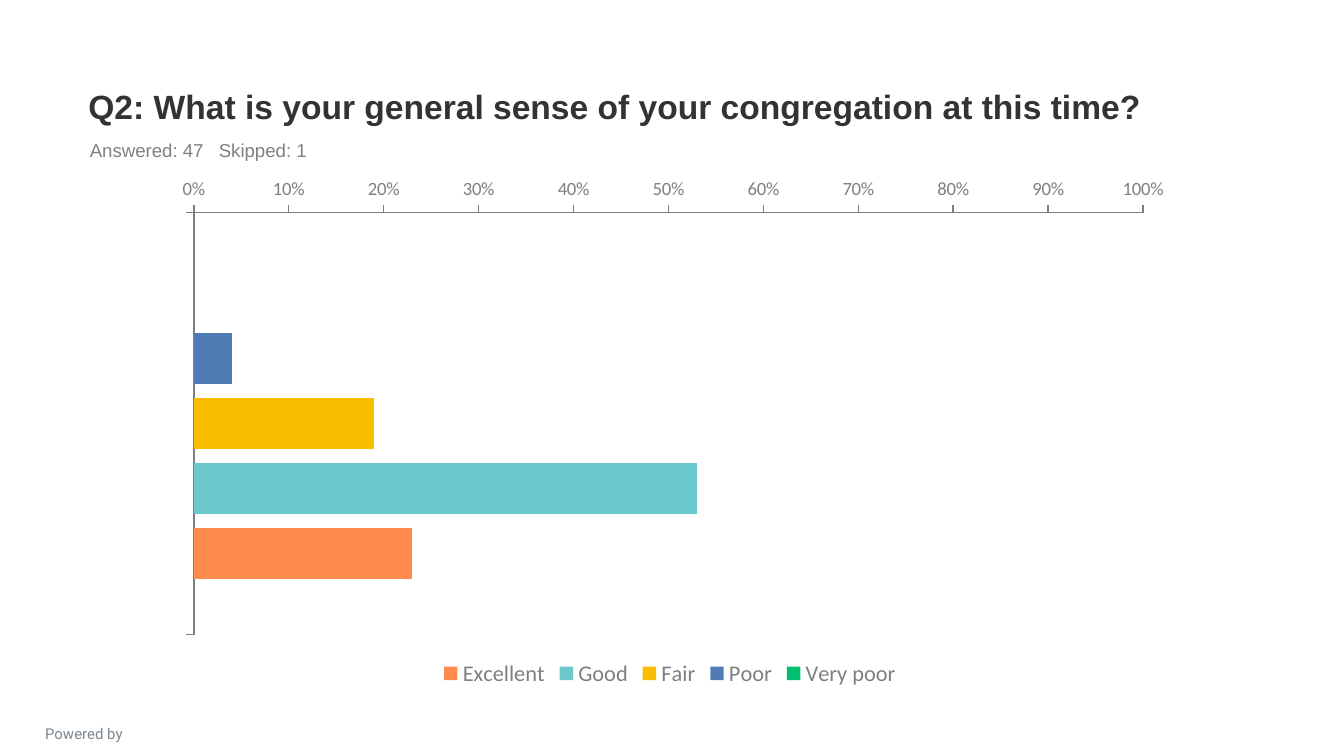
import pptx
import pptx.chart.data
import pptx.dml.color
import pptx.enum.chart
import pptx.enum.text
import pptx.oxml.ns
import pptx.util
from lxml import etree

PX = 4572  # 200 px to the inch
THEME = {
    "title": ("Arial", 18, "333333"),
    "counts": ("Arial", 10, "808080"),
    "footer": ("Roboto", 8, "7C878E"),
    "chart": ("Calibri", 18, "333333"),
    "axis": ("Calibri", 10, "7F7F7F"),
    "legend": ("Calibri", 12, "7F7F7F"),
}
ANSWERS = [
    ("Very poor", 0, "00BF6F"),
    ("Poor", 0.04, "507CB6"),
    ("Fair", 0.19, "F9BE00"),
    ("Good", 0.53, "6BC8CD"),
    ("Excellent", 0.23, "FF8B4F"),
]
rgb = pptx.dml.color.RGBColor.from_string


def style(font, role, bold=False):
    name, size, color = THEME[role]
    font.name, font.size, font.bold = name, pptx.util.Pt(size), bold
    font.color.rgb = rgb(color)


def add_text(role, box, text, bold=False):
    s = slide.shapes.add_textbox(*(v * PX for v in box))
    tf = s.text_frame
    tf.word_wrap = True
    p = tf.paragraphs[0]
    r = p.add_run()
    r.text = text
    style(r.font, role, bold)
    return tf, p


prs = pptx.Presentation()
prs.slide_width, prs.slide_height = 2000 * PX, 1125 * PX
slide = prs.slides.add_slide(prs.slide_layouts[6])

# Footer
tf, p = add_text("footer", (10, 1069, 230, 36), "Powered by")
p.alignment = pptx.enum.text.PP_ALIGN.CENTER

# Question and response counts
tf, p = add_text("title", (112, 78, 1800, 120),
                 "Q2: What is your general sense of your congregation at this time?", True)
tf.vertical_anchor = pptx.enum.text.MSO_ANCHOR.BOTTOM
tf, p = add_text("counts", (114, 197, 1800, 52), "Answered: 47\tSkipped: 1")
tabs = etree.SubElement(p._p.get_or_add_pPr(), pptx.oxml.ns.qn("a:tabLst"))
etree.SubElement(tabs, pptx.oxml.ns.qn("a:tab"), pos=str(192 * PX), algn="l")

# Bar chart, one series per answer
data = pptx.chart.data.CategoryChartData(number_format="0%")
data.categories = [" "]
for name, share, color in ANSWERS:
    data.add_series(name, [share])
chart = slide.shapes.add_chart(
    pptx.enum.chart.XL_CHART_TYPE.BAR_CLUSTERED,
    *(v * PX for v in (232, 250, 1530, 780)), data).chart
style(chart.font, "chart")
chart.has_title = False
plot = chart.plots[0]
plot.gap_width, plot.overlap, plot.vary_by_categories = 219, -27, False
for series, (name, share, color) in zip(plot.series, ANSWERS):
    series.format.fill.solid()
    series.format.fill.fore_color.rgb = rgb(color)
    series.invert_if_negative = False

# Axes
for axis in (chart.category_axis, chart.value_axis):
    axis.has_major_gridlines = False
    axis.major_tick_mark = pptx.enum.chart.XL_TICK_MARK.OUTSIDE
    axis.minor_tick_mark = pptx.enum.chart.XL_TICK_MARK.NONE
    axis.format.line.color.rgb = rgb(THEME["axis"][2])
    axis.format.line.width = pptx.util.Pt(0.75)
    style(axis.tick_labels.font, "axis")
chart.category_axis.reverse_order = True
chart.category_axis.tick_label_position = pptx.enum.chart.XL_TICK_LABEL_POSITION.LOW
chart.category_axis.crosses = pptx.enum.chart.XL_AXIS_CROSSES.MINIMUM
chart.value_axis.minimum_scale, chart.value_axis.maximum_scale = 0, 1
chart.value_axis.major_unit = 0.1
chart.value_axis.tick_labels.number_format = "0%"
chart.value_axis.tick_labels.number_format_is_linked = False

# Legend
chart.has_legend = True
chart.legend.position = pptx.enum.chart.XL_LEGEND_POSITION.BOTTOM
chart.legend.include_in_layout = False
style(chart.legend.font, "legend")

prs.save("out.pptx")
